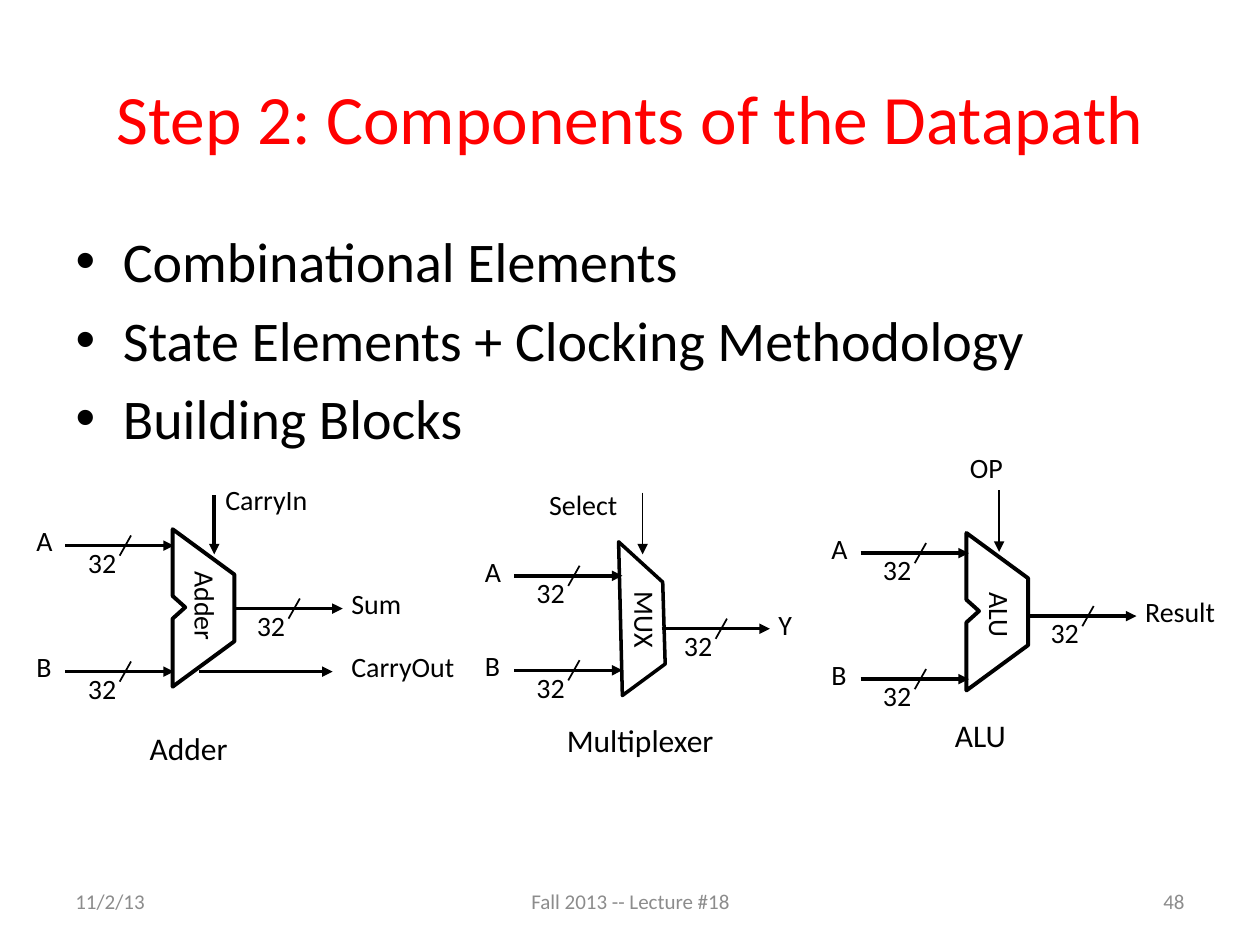
from lxml import etree
from pptx import Presentation
from pptx.dml.color import RGBColor
from pptx.enum import shapes, text
from pptx.oxml import ns
from pptx.util import Inches, Pt

FONT = "Calibri"
INK = {"title": "FF0000", "text": "000000", "foot": "8C8C8C"}
LEFT, MID, RIGHT = text.PP_ALIGN.LEFT, text.PP_ALIGN.CENTER, text.PP_ALIGN.RIGHT

TITLE = "Step 2: Components of the Datapath"
POINTS = ["Combinational Elements", "State Elements + Clocking Methodology",
          "Building Blocks"]
FOOT = [("11/2/13", 0.5, 2.33, LEFT), ("Fall 2013 -- Lecture #18", 3.42, 3.17, MID),
        ("48", 7.17, 2.33, RIGHT)]

# Outlines, relative to the top left of each block
NOTCHED = [(0, 0), (0, 0.53), (0.1, 0.62), (0, 0.71), (0, 1.25), (0.49, 0.89), (0.49, 0.36)]
PLAIN = [(0, 0), (0.03, 1.22), (0.37, 0.97), (0.35, 0.32)]

# Labels are (text, left, top, width); buses start at (left, top)
BLOCKS = [
    dict(form=NOTCHED, at=(1.37, 4.2), edge=2.25, name=("Adder", 1.24, 4.64, 0.78),
         ins=(0.52, 4.33, 5.33), out=(1.86, 4.83, "Sum", 0.6),
         ctrl=(1.7, 3.93, 4.4, 2), sign=("CarryIn", 1.69, 3.78, 0.86),
         foot=("Adder", 1.09, 5.74, 0.83)),
    dict(form=PLAIN, at=(4.91, 4.3), edge=2, name=("MUX", 4.79, 4.74, 0.66),
         ins=(4.08, 4.57, 5.32), out=(5.25, 4.99, "Y", 0.31),
         ctrl=(5.1, 3.91, 4.4, 1), sign=("Select", 4.26, 3.82, 0.91),
         foot=("Multiplexer", 4.4, 5.67, 1.42)),
    dict(form=NOTCHED, at=(7.67, 4.23), edge=2.25, name=("ALU", 7.64, 4.71, 0.59),
         ins=(6.83, 4.39, 5.39), out=(8.16, 4.89, "Result", 0.78),
         ctrl=(7.93, 3.89, 4.38, 1), sign=("OP", 7.6, 3.53, 0.66),
         foot=("ALU", 7.48, 5.63, 0.61)),
]
RUN = 0.86  # length of a bus

deck = Presentation()
deck.slide_width, deck.slide_height = Inches(10), Inches(7.5)
slide = deck.slides.add_slide(deck.slide_layouts[1])


def place(shape, *box):
    shape.left, shape.top, shape.width, shape.height = map(Inches, box)


def style(frame, size, ink, align=LEFT):
    for par in frame.paragraphs:
        par.alignment = align
        for run in par.runs:
            run.font.name, run.font.size = FONT, Pt(size)
            run.font.color.rgb = RGBColor.from_string(INK[ink])


def label(words, x, y, wide, size=16, high=0.37, ink="text", align=LEFT, turn=0):
    box = slide.shapes.add_textbox(*map(Inches, (x, y, wide, high)))
    box.rotation = turn
    frame = box.text_frame
    frame.text, frame.word_wrap = words, False
    style(frame, size, ink, align)
    return frame


def stroke(line, width):
    line.color.rgb = RGBColor.from_string(INK["text"])
    line.width = Pt(width)


def wire(x1, y1, x2, y2, width=2, arrow=True):
    link = slide.shapes.add_connector(shapes.MSO_CONNECTOR.STRAIGHT,
                                      *map(Inches, (x1, y1, x2, y2)))
    stroke(link.line, width)
    if arrow:
        etree.SubElement(link.line._get_or_add_ln(), ns.qn("a:tailEnd"), type="triangle")
    etree.SubElement(link._element.spPr, ns.qn("a:effectLst"))


def bus(x, y):
    wire(x, y, x + RUN, y)
    wire(x + 0.52, y - 0.08, x + 0.43, y + 0.08, 1, False)
    label("32", x + 0.08, y - 0.05, 0.43)


def block(form, at, edge, name, ins, out, ctrl, sign, foot):
    # Input and output buses
    x, *rows = ins
    for mark, y in zip("AB", rows):
        bus(x, y)
        label(mark, x - 0.33, y - 0.22, 0.33)
    x, y, words, wide = out
    bus(x, y)
    label(words, x + RUN - 0.03, y - 0.22, wide)
    # Control line and captions
    x, top, end, width = ctrl
    wire(x, top, x, end, width)
    label(*sign)
    label(*foot, size=18, high=0.4)
    label(*name, turn=90)
    # Outline
    pts = [(Inches(at[0] + dx), Inches(at[1] + dy)) for dx, dy in form]
    pen = slide.shapes.build_freeform(*pts[0])
    pen.add_line_segments(pts[1:], close=True)
    body = pen.convert_to_shape()
    body.shadow.inherit = False
    body.fill.background()
    stroke(body.line, edge)


# Title and list
title, body = slide.placeholders
place(title, 0.5, 0.3, 9, 1.25)
title.text_frame.text = TITLE
style(title.text_frame, 39.6, "title", MID)
place(body, 0.5, 1.75, 9, 2.01)
body.text_frame.text = "\n".join(POINTS)
style(body.text_frame, 32, "text")

# Footer
for words, x, wide, align in FOOT:
    frame = label(words, x, 6.95, wide, 12, 0.4, "foot", align)
    frame.word_wrap = True
    frame.vertical_anchor = text.MSO_ANCHOR.MIDDLE

# Diagrams
for part in BLOCKS:
    block(**part)
wire(1.58, 5.33, 2.64, 5.33)
label("CarryOut", 2.69, 5.11, 1.03)

deck.save("out.pptx")
